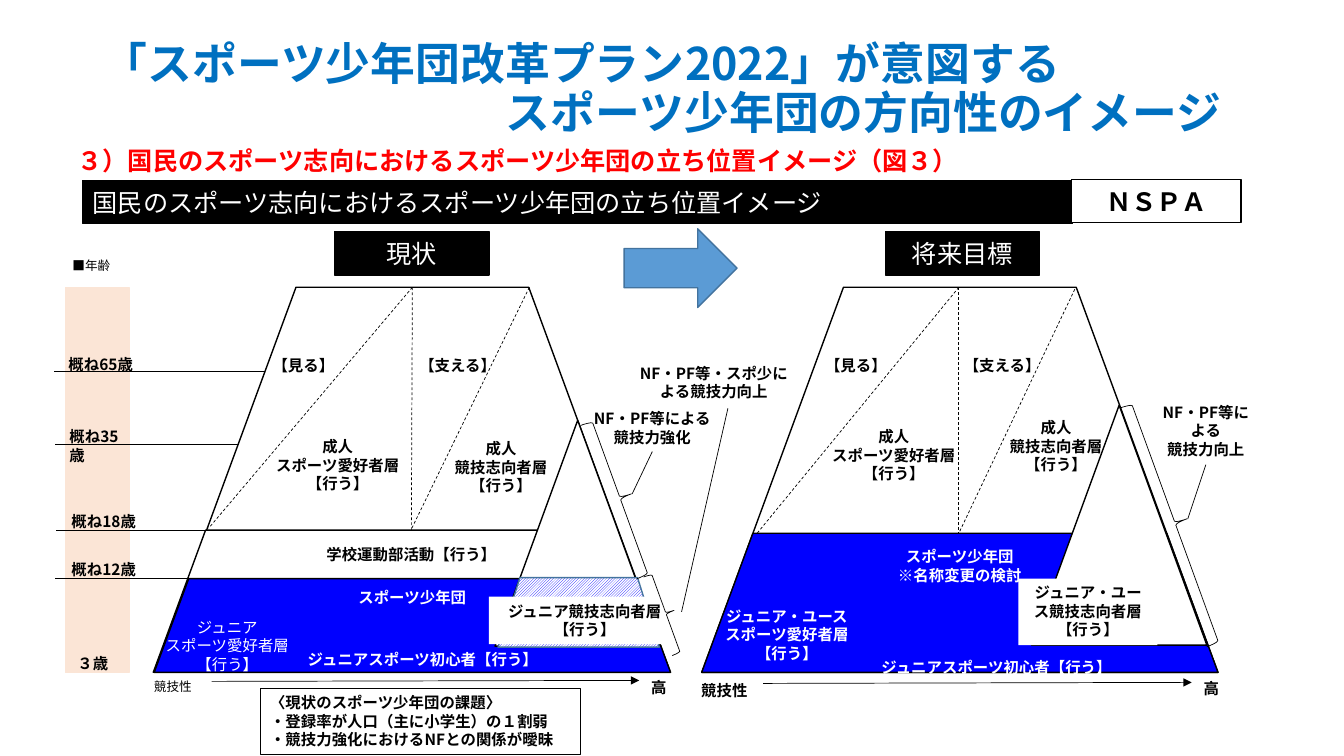
from lxml import etree
from pptx import Presentation
from pptx.dml.color import RGBColor
from pptx.enum.dml import MSO_LINE, MSO_PATTERN
from pptx.enum.shapes import MSO_CONNECTOR, MSO_SHAPE
from pptx.enum.text import MSO_ANCHOR, PP_ALIGN
from pptx.oxml.ns import qn
from pptx.util import Inches, Pt

RECTANGLE = MSO_SHAPE.RECTANGLE
TRAPEZOID = MSO_SHAPE.TRAPEZOID
TRIANGLE = MSO_SHAPE.ISOSCELES_TRIANGLE
BRACE = MSO_SHAPE.RIGHT_BRACE
ARROW = MSO_SHAPE.RIGHT_ARROW
STRAIGHT = MSO_CONNECTOR.STRAIGHT
DASH = MSO_LINE.DASH
LEFT, CENTER = PP_ALIGN.LEFT, PP_ALIGN.CENTER
TOP, MIDDLE = MSO_ANCHOR.TOP, MSO_ANCHOR.MIDDLE
HATCH = MSO_PATTERN.LIGHT_UPWARD_DIAGONAL

FONT = "Noto Sans CJK JP"
COLORS = {
    "black": "000000", "white": "FFFFFF", "blue": "0000FF", "red": "FF0000",
    "title": "0070C0", "arrow": "5B9BD5", "edge": "43739E", "peach": "FBE5D6",
}
COLORS = {name: RGBColor.from_string(value) for name, value in COLORS.items()}
FORMATS = {
    "label": {"name": FONT, "size": Pt(11), "bold": True},
    "plain": {"name": FONT, "size": Pt(11), "bold": False},
    "small": {"name": FONT, "size": Pt(9), "bold": False},
    "banner": {"name": FONT, "size": Pt(18), "bold": False},
    "heading": {"name": FONT, "size": Pt(18), "bold": True},
    "title": {"name": FONT, "size": Pt(32), "bold": True},
}
SKILL = "スポーツ愛好者層\n【行う】"
COMPETITOR = "競技志向者層\n【行う】"
BEGINNER = "ジュニアスポーツ初心者【行う】"

presentation = Presentation()
presentation.slide_width = Inches(13.33)
presentation.slide_height = Inches(7.5)
slide = presentation.slides.add_slide(presentation.slide_layouts[6])


def add_block(kind, box, text="", style="label", color="black", align=CENTER,
              anchor=TOP, fill=None, line=None, width=1, adjust=None):
    lengths = [Inches(value) for value in box]
    if kind is None:
        shape = slide.shapes.add_textbox(*lengths)
    else:
        shape = slide.shapes.add_shape(kind, *lengths)
        shape.shadow.inherit = False
        if fill:
            shape.fill.solid()
            shape.fill.fore_color.rgb = COLORS[fill]
        else:
            shape.fill.background()
        if line:
            shape.line.color.rgb = COLORS[line]
            shape.line.width = Pt(width)
        else:
            shape.line.fill.background()
        if adjust:
            shape.adjustments[0] = adjust
    if text:
        frame = shape.text_frame
        frame.word_wrap = True
        frame.vertical_anchor = anchor
        frame.text = text
        for paragraph in frame.paragraphs:
            paragraph.alignment = align
            for run in paragraph.runs:
                for name, value in FORMATS[style].items():
                    setattr(run.font, name, value)
                run.font.color.rgb = COLORS[color]
                east_asian = etree.SubElement(run.font._element, qn("a:ea"))
                east_asian.set("typeface", FONT)
    return shape


def add_line(x1, y1, x2, y2, dash=None, arrow=False):
    connector = slide.shapes.add_connector(
        STRAIGHT, Inches(x1), Inches(y1), Inches(x2), Inches(y2))
    connector.line.color.rgb = COLORS["black"]
    connector.line.width = Pt(0.5)
    if dash:
        connector.line.dash_style = dash
    if arrow:
        outline = connector.line._get_or_add_ln()
        etree.SubElement(outline, qn("a:tailEnd")).set("type", "triangle")
    etree.SubElement(connector._element.spPr, qn("a:effectLst"))
    return connector


title = add_block(None, (0.92, 0.4, 11.5, 1),
                  "「スポーツ少年団改革プラン2022」が意図する\n"
                  "スポーツ少年団の方向性のイメージ",
                  "title", "title", LEFT, MIDDLE)
for paragraph in title.text_frame.paragraphs:
    paragraph.line_spacing = 0.9
second_line = title.text_frame.paragraphs[1]._p.get_or_add_pPr()
second_line.set("marL", str(Inches(4)))
second_line.set("indent", "0")

add_block(None, (0.67, 1.39, 9.26, 0.4),
          "３）国民のスポーツ志向におけるスポーツ少年団の立ち位置イメージ（図３）",
          "heading", "red", LEFT)
add_block(RECTANGLE, (0.82, 1.79, 9.82, 0.43),
          "国民のスポーツ志向におけるスポーツ少年団の立ち位置イメージ",
          "banner", "white", LEFT, MIDDLE, "black", "black")
add_block(RECTANGLE, (10.63, 1.78, 1.68, 0.43), "ＮＳＰＡ",
          "heading", "black", CENTER, MIDDLE, "white", "black")
for left, text in ((3.32, "現状"), (8.78, "将来目標")):
    add_block(RECTANGLE, (left, 2.3, 1.53, 0.43), text,
              "banner", "white", CENTER, MIDDLE, "black", "black")
add_block(ARROW, (6.19, 2.27, 1.12, 0.78), fill="arrow", line="edge")

add_block(RECTANGLE, (0.65, 2.85, 0.63, 3.82), fill="peach", line="peach")
for x1, x2, y in ((0.54, 2.67, 3.68), (0.55, 2.38, 4.41),
                  (0.56, 2.1, 5.26), (0.55, 1.92, 5.74)):
    add_line(x1, y, x2, y)
add_block(None, (0.62, 2.51, 0.8, 0.25), "■年齢", "small", align=LEFT)
for left, top, width, text in (
        (0.58, 3.47, 0.84, "概ね65歳"), (0.59, 4.19, 0.83, "概ね35歳"),
        (0.61, 5.03, 0.88, "概ね18歳"), (0.61, 5.51, 0.84, "概ね12歳"),
        (0.67, 6.44, 0.58, "３歳")):
    add_block(None, (left, top, width, 0.29), text, align=LEFT)

for left, top, text, color, fill in (
        (1.53, 2.85, "", "black", "white"),
        (1.52, 5.26, "学校運動部活動【行う】", "black", "white"),
        (1.53, 5.74, "スポーツ少年団", "white", "blue"),
        (6.96, 2.85, "", "black", "white"),
        (6.96, 5.29, "スポーツ少年団\n※名称変更の検討", "white", "blue")):
    add_block(TRAPEZOID, (left, top, 5.12, 6.67 - top), text, color=color,
              fill=fill, line="black", adjust=0.368)
for box in ((4.91, 4.17, 1.64, 2.24), (10.23, 4.02, 1.74, 2.38)):
    add_block(TRIANGLE, box, fill="white", line="black")

junior_band = add_block(TRAPEZOID, (4.94, 5.73, 1.6, 0.69), line="edge", adjust=0.314)
junior_band.fill.patterned()
junior_band.fill.pattern = HATCH
junior_band.fill.fore_color.rgb = COLORS["blue"]
junior_band.fill.back_color.rgb = COLORS["white"]

for box, text, style in (
        ((1.43, 6.08, 1.65, 0.66), "ジュニア\n" + SKILL, "plain"),
        ((2.92, 6.4, 2.55, 0.29), BEGINNER, "label"),
        ((6.98, 5.97, 1.65, 0.66), "ジュニア・ユース\n" + SKILL, "label"),
        ((8.63, 6.48, 2.51, 0.29), BEGINNER, "label")):
    add_block(None, box, text, style, "white")
for box, text in (((4.85, 5.92, 1.9, 0.47), "ジュニア" + COMPETITOR),
                  ((10.1, 5.74, 1.38, 0.66), "ジュニア・ユース" + COMPETITOR)):
    add_block(RECTANGLE, box, text, fill="white")

for ends in ((4.09, 2.85, 4.08, 5.26), (4.09, 2.85, 2.07, 5.24),
             (5.25, 2.85, 4.08, 5.25), (9.51, 2.85, 9.51, 5.29),
             (9.51, 2.85, 7.51, 5.29), (10.66, 2.87, 9.51, 5.29)):
    add_line(*ends, dash=DASH)

for box, text in (
        ((2.59, 3.48, 0.84, 0.29), "【見る】"),
        ((4.01, 3.48, 1.06, 0.29), "【支える】"),
        ((2.64, 4.29, 1.42, 0.66), "成人\n" + SKILL),
        ((4.34, 4.31, 1.26, 0.66), "成人\n" + COMPETITOR),
        ((8.07, 3.48, 0.84, 0.29), "【見る】"),
        ((9.43, 3.48, 1.02, 0.29), "【支える】"),
        ((8.14, 4.19, 1.45, 0.66), "成人\n" + SKILL),
        ((9.81, 4.1, 1.33, 0.66), "成人\n" + COMPETITOR),
        ((6.22, 3.56, 1.72, 0.47), "NF・PF等・スポ少による競技力向上")):
    add_block(None, box, text)

for box in ((6.03, 4.13, 0.24, 1.62), (6.52, 5.67, 0.17, 0.83),
            (11.53, 3.93, 0.25, 2.52)):
    brace = add_block(BRACE, box, line="black", width=0.5)
    brace.rotation = 340
add_line(7.22, 4.05, 6.76, 6.07)
for box, text, ends in (
        ((5.76, 4.01, 1.42, 0.47), "NF・PF等による\n競技力強化", (6.47, 4.48, 6.27, 4.9)),
        ((11.37, 3.95, 1.18, 0.66), "NF・PF等による\n競技力向上", (11.96, 4.61, 11.78, 5.15))):
    callout = add_block(None, box, text)
    add_line(*ends).begin_connect(callout, 2)

for box, text, style in (
        ((1.33, 6.69, 0.77, 0.25), "競技性", "small"),
        ((6.34, 6.68, 0.39, 0.29), "高", "label"),
        ((6.8, 6.71, 0.77, 0.29), "競技性", "label"),
        ((11.82, 6.69, 0.39, 0.29), "高", "label")):
    add_block(None, box, text, style)
add_line(2.1, 6.76, 6.34, 6.75, arrow=True)
add_line(7.57, 6.78, 11.82, 6.77, arrow=True)
add_block(RECTANGLE, (2.58, 6.83, 3.18, 0.66),
          "〈現状のスポーツ少年団の課題〉\n・登録率が人口（主に小学生）の１割弱\n"
          "・競技力強化におけるNFとの関係が曖昧",
          align=LEFT, line="black", width=0.75)

presentation.save("out.pptx")
